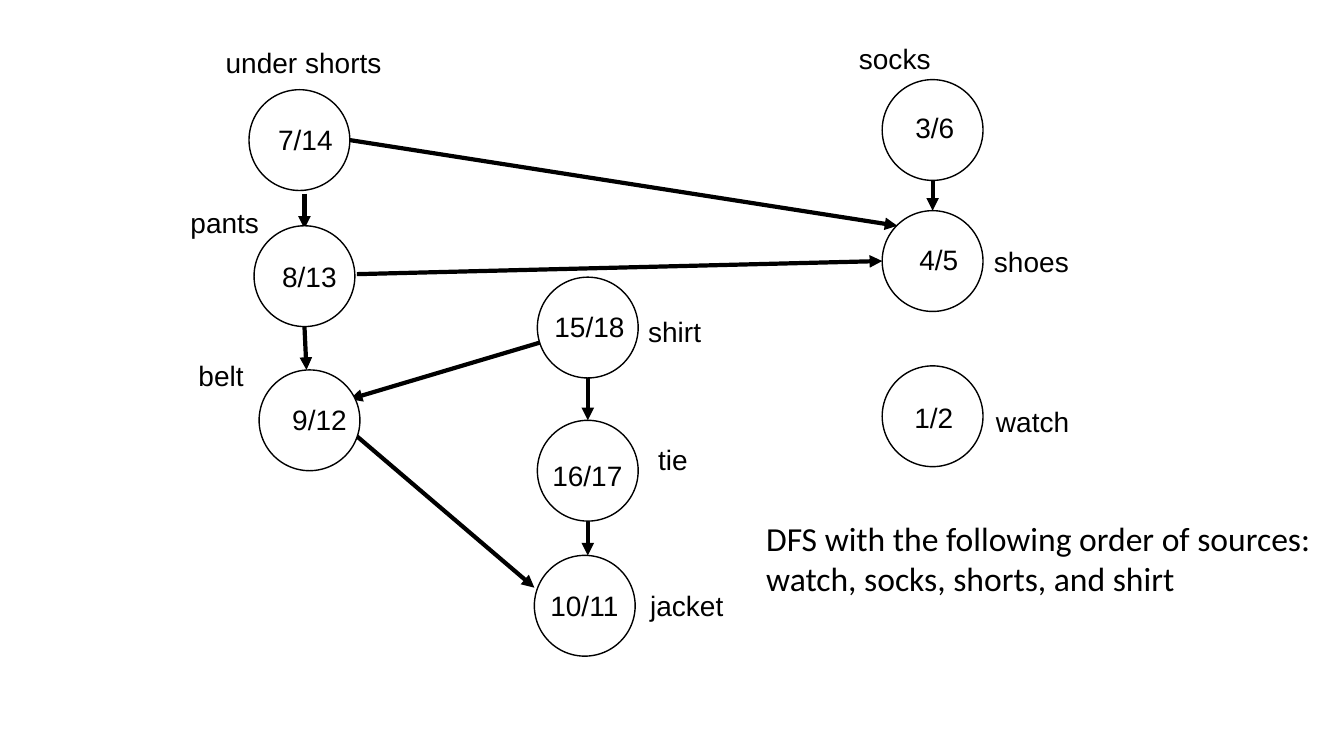
from lxml import etree
from pptx import Presentation
from pptx.dml.color import RGBColor
from pptx.enum import shapes, text
from pptx.oxml import ns
from pptx.util import Inches, Pt

BLACK = RGBColor(0x00, 0x00, 0x00)
WHITE = RGBColor(0xFF, 0xFF, 0xFF)
DIAMETER = 1
TEXT_HEIGHT = 0.44

EDGES = [
    (9.25, 1.79, 9.25, 2.09),
    (3.47, 1.39, 8.9, 2.24),
    (3.54, 2.72, 8.75, 2.59),
    (3.02, 1.92, 3.02, 2.27),
    (3.02, 3.24, 3.04, 3.67),
    (5.35, 3.4, 3.47, 3.96),
    (5.83, 5.17, 5.83, 5.51),
    (5.83, 3.75, 5.83, 4.17),
    (3.53, 4.32, 5.3, 5.83),
]
LABELS = [
    ("under shorts", 2.14, 0.4, 1.76),
    ("socks", 8.42, 0.36, 0.92),
    ("pants", 1.79, 1.99, 0.89),
    ("belt", 1.87, 3.51, 0.65),
    ("shirt", 6.33, 3.07, 0.73),
    ("tie", 6.43, 4.34, 0.5),
    ("jacket", 6.35, 5.79, 0.93),
    ("shoes", 9.76, 2.38, 0.95),
    ("watch", 9.78, 3.96, 0.93),
]
NODES = [
    ("9/12", 2.57, 3.67, 2.8, 3.94, 0.75),
    ("1/2", 8.75, 3.63, 8.97, 3.92, 0.59),
    ("4/5", 8.75, 2.09, 9.02, 2.36, 0.59),
    ("3/6", 8.75, 0.79, 8.98, 1.05, 0.59),
    ("10/11", 5.3, 5.51, 5.36, 5.79, 0.88),
    ("16/17", 5.33, 4.17, 5.38, 4.5, 0.9),
    ("15/18", 5.33, 2.75, 5.4, 3.02, 0.9),
    ("7/14", 2.47, 0.89, 2.66, 1.17, 0.75),
    ("8/13", 2.52, 2.24, 2.7, 2.53, 0.75),
]
CAPTION = [
    "DFS with the following order of sources:",
    "watch, socks, shorts, and shirt",
]


def add_edge(parent, x1, y1, x2, y2):
    """Draw a directed edge with a triangular head at its end."""
    edge = parent.add_connector(
        shapes.MSO_CONNECTOR.STRAIGHT, Inches(x1), Inches(y1), Inches(x2), Inches(y2)
    )
    edge.line.color.rgb = BLACK
    edge.line.width = Pt(3)
    etree.SubElement(edge.line._get_or_add_ln(), ns.qn("a:tailEnd"), type="triangle")
    etree.SubElement(edge._element.spPr, ns.qn("a:effectLst"))


def add_text(parent, lines, left, top, width, height=TEXT_HEIGHT,
             font="Arial", size=20, wrap=False):
    """Add a text box with one paragraph per line."""
    box = parent.add_textbox(Inches(left), Inches(top), Inches(width), Inches(height))
    tf = box.text_frame
    tf.word_wrap = wrap
    tf.auto_size = text.MSO_AUTO_SIZE.SHAPE_TO_FIT_TEXT
    for i, line in enumerate(lines):
        p = tf.add_paragraph() if i else tf.paragraphs[0]
        r = p.add_run()
        r.text = line
        r.font.name = font
        r.font.size = Pt(size)
        r.font.color.rgb = BLACK


def add_node(parent, times, left, top, text_left, text_top, text_width):
    """Group a circle with its discovery and finish times."""
    group = parent.add_group_shape()
    sp = group.shapes.add_shape(
        shapes.MSO_SHAPE.OVAL, Inches(left), Inches(top), Inches(DIAMETER), Inches(DIAMETER)
    )
    sp.shadow.inherit = False
    sp.fill.solid()
    sp.fill.fore_color.rgb = WHITE
    sp.line.color.rgb = BLACK
    sp.line.width = Pt(1)
    add_text(group.shapes, [times], text_left, text_top, text_width)


def main():
    """Build the slide of the depth-first search on clothing."""
    prs = Presentation()
    prs.slide_width = Inches(13.33)
    prs.slide_height = Inches(7.5)
    s = prs.slides.add_slide(prs.slide_layouts[6])
    for edge in EDGES:
        add_edge(s.shapes, *edge)
    for name, left, top, width in LABELS:
        add_text(s.shapes, [name], left, top, width)
    for node in NODES:
        add_node(s.shapes, *node)
    add_text(s.shapes, CAPTION, 7.5, 5.09, 5.69, 0.91, "Calibri", 24, True)
    prs.save("out.pptx")


if __name__ == "__main__":
    main()
